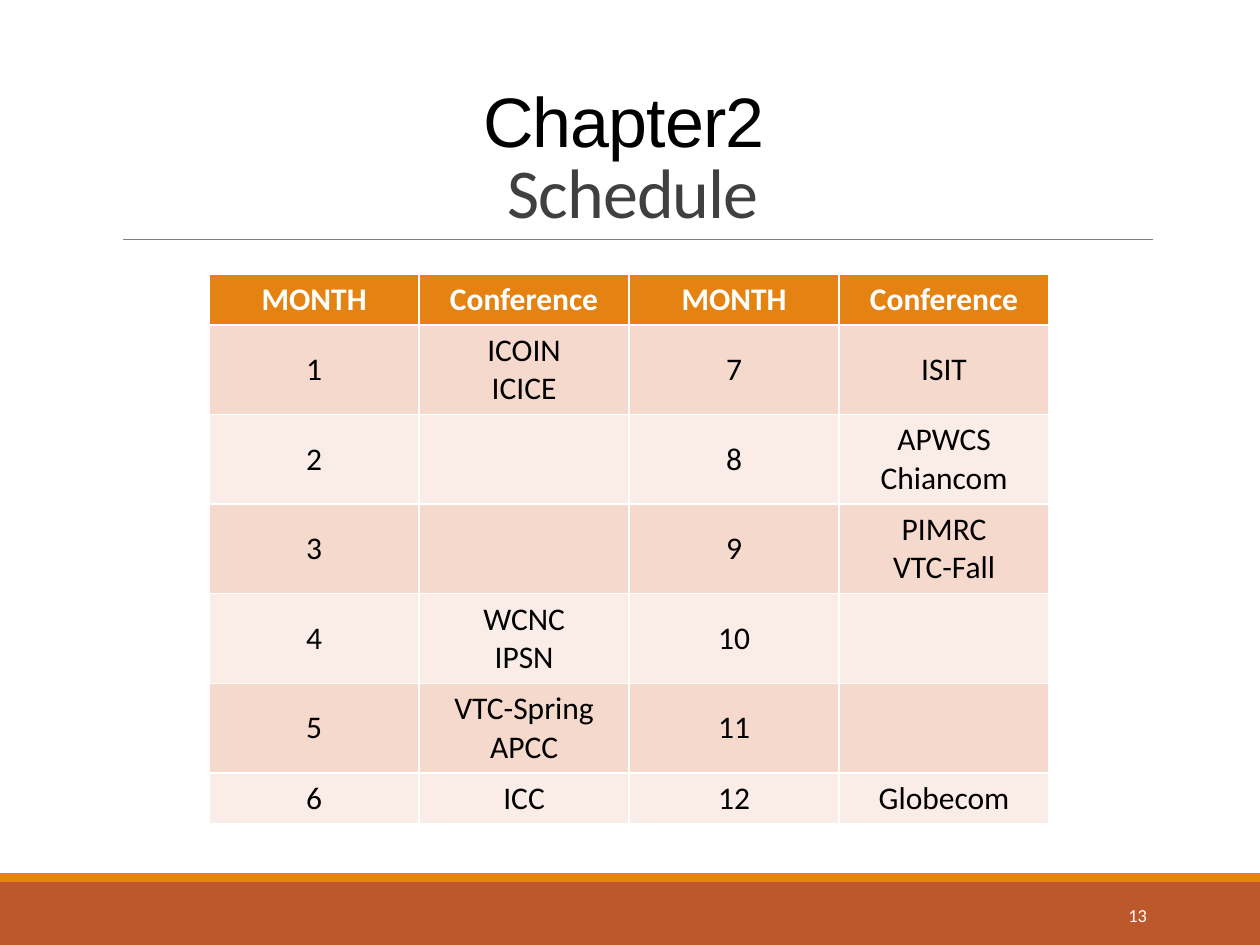
from lxml import etree
from pptx import Presentation
from pptx.dml.color import RGBColor
from pptx.enum.shapes import MSO_CONNECTOR, MSO_SHAPE
from pptx.enum.text import MSO_ANCHOR, MSO_AUTO_SIZE, PP_ALIGN
from pptx.oxml.ns import qn
from pptx.util import Pt

RECT, STRAIGHT = MSO_SHAPE.RECTANGLE, MSO_CONNECTOR.STRAIGHT
CENTER, RIGHT = PP_ALIGN.CENTER, PP_ALIGN.RIGHT
TOP, MIDDLE, BOTTOM = MSO_ANCHOR.TOP, MSO_ANCHOR.MIDDLE, MSO_ANCHOR.BOTTOM
NO_AUTOFIT = MSO_AUTO_SIZE.NONE
TITLE_ONLY = 5

COLORS = {
    "rust": "BD582C", "orange": "E48312", "rule": "808080",
    "black": "000000", "gray": "404040", "white": "FFFFFF",
    "band_dark": "F5D9CC", "band_light": "FAEDE7",
}

# "\v" is a line break, "\n" starts a new paragraph
SCHEDULE = [
    ["MONTH", "Conference", "MONTH", "Conference"],
    ["1", "ICOIN\vICICE", "7", "ISIT"],
    ["2", "", "8", "APWCS\nChiancom"],
    ["3", "", "9", "PIMRC\nVTC-Fall"],
    ["4", "WCNC\vIPSN", "10", ""],
    ["5", "VTC-Spring\nAPCC", "11", ""],
    ["6", "ICC", "12", "Globecom"],
]
ONE_LINE, TWO_LINES = 29.2, 51.2


def rgb(name):
    return RGBColor.from_string(COLORS[name])


class SlideBuilder:
    def __init__(self, slide, font="Calibri"):
        self.slide = slide
        self.font = font

    def style(self, font, size, color, name=None, bold=False):
        font.name, font.size, font.bold = name or self.font, Pt(size), bold
        font.color.rgb = rgb(color)

    def bar(self, x, y, w, h, color):
        sp = self.slide.shapes.add_shape(RECT, Pt(x), Pt(y), Pt(w), Pt(h))
        sp.shadow.inherit = False
        sp.fill.solid()
        sp.fill.fore_color.rgb = rgb(color)
        sp.line.fill.background()

    def line(self, x1, y1, x2, y2, color, width):
        cxn = self.slide.shapes.add_connector(STRAIGHT, Pt(x1), Pt(y1), Pt(x2), Pt(y2))
        cxn.line.color.rgb = rgb(color)
        cxn.line.width = Pt(width)
        etree.SubElement(cxn._element.spPr, qn("a:effectLst"))

    def title(self, x, y, w, h, size, lines):
        """Fill the title with (text, font name, colour) lines."""
        sp = self.slide.shapes.title
        sp.left, sp.top, sp.width, sp.height = Pt(x), Pt(y), Pt(w), Pt(h)
        tf = sp.text_frame
        tf.auto_size, tf.word_wrap, tf.vertical_anchor = NO_AUTOFIT, True, BOTTOM
        p = tf.paragraphs[0]
        p.alignment, p.line_spacing = CENTER, 0.85
        p.font.size = Pt(size)
        for i, (text, name, color) in enumerate(lines):
            if i:
                p.add_line_break()
            r = p.add_run()
            r.text = text
            self.style(r.font, size, color, name)
            r._r.get_or_add_rPr().set("spc", "-50")

    def text(self, x, y, w, h, text, size, color, align):
        tf = self.slide.shapes.add_textbox(Pt(x), Pt(y), Pt(w), Pt(h)).text_frame
        tf.word_wrap, tf.vertical_anchor = True, MIDDLE
        p = tf.paragraphs[0]
        p.text, p.alignment = text, align
        self.style(p.font, size, color)

    def table(self, x, y, w, rows, heights, size):
        table = self.slide.shapes.add_table(
            len(rows), len(rows[0]), Pt(x), Pt(y), Pt(w), Pt(sum(heights))).table
        for i, (values, height) in enumerate(zip(rows, heights)):
            header = i == 0
            fill = "orange" if header else "band_dark" if i % 2 else "band_light"
            table.rows[i].height = Pt(height)
            for cell, value in zip(table.rows[i].cells, values):
                cell.fill.solid()
                cell.fill.fore_color.rgb = rgb(fill)
                cell.vertical_anchor = TOP if header else MIDDLE
                cell.text = value
                for p in cell.text_frame.paragraphs:
                    p.alignment = CENTER
                    self.style(p.font, size, "white" if header else "black", bold=header)


def main():
    prs = Presentation()
    prs.slide_width, prs.slide_height = Pt(720), Pt(540)
    s = SlideBuilder(prs.slides.add_slide(prs.slide_layouts[TITLE_ONLY]))

    s.bar(0, 504, 720, 36, "rust")
    s.bar(0, 499, 720, 5, "orange")
    s.line(70.5, 136.8, 658.8, 136.8, "rule", 0.5)
    s.title(64.8, 22.5, 594, 114.3, 40,
            [("Chapter2 ", "Arial", "black"), ("Schedule", "Calibri", "gray")])
    s.text(584.6, 508.5, 77.8, 28.8, "13", 10.5, "white", RIGHT)

    heights = [ONE_LINE] + [TWO_LINES] * 5 + [ONE_LINE]
    s.table(119.5, 156.5, 480, SCHEDULE, heights, 18)

    prs.save("out.pptx")


if __name__ == "__main__":
    main()
